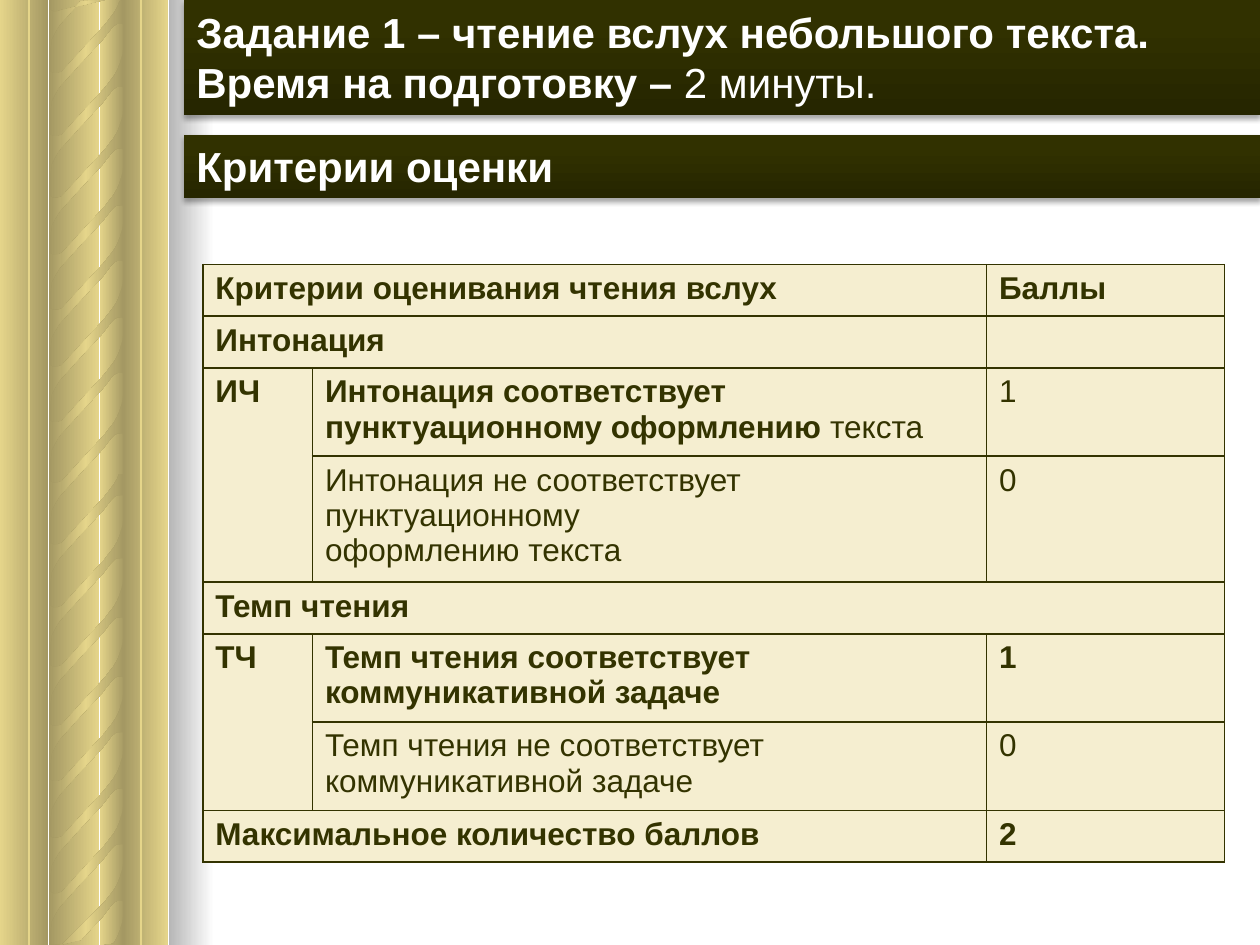
"""Builds the slide with the marking criteria for reading aloud."""
import pptx
import pptx.util
import pptx.dml.color
import pptx.enum.shapes
import pptx.enum.text
import pptx.oxml
import pptx.oxml.ns

Inches = pptx.util.Inches
RECTANGLE = pptx.enum.shapes.MSO_SHAPE.RECTANGLE

THEME = {
    "font": "Arial", "banner_size": 24, "table_size": 18,
    "banner_text": "FFFFFF", "table_text": "333300", "table_border": "333300",
    "cell": "F5EED0", "gold": "E5D58A",
    "light_to_dark": [(0, "E5D58A"), (100, "A49863")],
    "dark_to_light": [(0, "A49863"), (100, "E5D58A")],
    "strand": [(0, "A49863"), (50, "E5D58A"), (100, "A49863")],
    "column_shade": [(0, "B6B6B6"), (100, "FFFFFF")],
    "banner": [(0, "262600"), (80, "313100"), (100, "323200")],
}
SLIDE_WIDTH, SLIDE_HEIGHT = 10, 7.5
BANNER_LEFT = 1.46

BANNERS = [
    (0, 0.91, [[("Задание 1 – чтение вслух небольшого текста.", True)],
               [("Время на подготовку – ", True), ("2 минуты.", False)]]),
    (1.07, 0.5, [[("Критерии оценки", True)]]),
]

COLUMN_WIDTHS = [0.87, 5.35, 1.89]
ROW_HEIGHTS = [0.41, 0.41, 0.7, 1, 0.41, 0.7, 0.7, 0.41]
CRITERIA = {
    (0, 0): [[("Критерии оценивания чтения вслух", True)]],
    (0, 2): [[("Баллы", True)]],
    (1, 0): [[("Интонация", True)]],
    (2, 0): [[("ИЧ", True)]],
    (2, 1): [[("Интонация соответствует пунктуационному оформлению ", True), ("текста", False)]],
    (2, 2): [[("1", False)]],
    (3, 1): [[("Интонация не соответствует пунктуационному", False)],
             [("оформлению текста", False)]],
    (3, 2): [[("0", False)]],
    (4, 0): [[("Темп чтения", True)]],
    (5, 0): [[("ТЧ", True)]],
    (5, 1): [[("Темп чтения соответствует коммуникативной задаче", True)]],
    (5, 2): [[("1", True)]],
    (6, 1): [[("Темп чтения не соответствует коммуникативной задаче", False)]],
    (6, 2): [[("0", False)]],
    (7, 0): [[("Максимальное количество баллов", True)]],
    (7, 2): [[("2", True)]],
}
MERGES = [((0, 0), (0, 1)), ((1, 0), (1, 1)), ((2, 0), (3, 0)),
          ((4, 0), (4, 2)), ((5, 0), (6, 0)), ((7, 0), (7, 1))]

COLUMN_BANDS = [(0.79, 0.2, "light_to_dark"), (0, 0.38, "light_to_dark"),
                (0.39, 0.4, "dark_to_light"), (0.98, 0.35, "dark_to_light")]
COLUMN_HALVES = [
    (3.74, [4.58, 5.05, 5.49, 5.94, 6.38, 6.83, 4.11, 3.61]),
    (0, [0.86, 1.31, 1.75, 2.2, 2.64, 7.25, 0.37, -0.13, -0.62, 3.12]),
]
STRAND = [(0.98, 0.09), (0.98, 0.33), (0.97, 0.32), (0.93, 0.32), (0.91, 0.33),
          (0.88, 0.36), (0.81, 0.45), (0.64, 0.63), (0.47, 0.82), (0.44, 0.87),
          (0.41, 0.93), (0.4, 1.01), (0.39, 1.12), (0.39, 0.63), (0.39, 0.68),
          (0.4, 0.7), (0.42, 0.71), (0.44, 0.71), (0.46, 0.71), (0.49, 0.7),
          (0.83, 0.33), (0.9, 0.24), (0.93, 0.19), (0.95, 0.14), (0.97, 0.07),
          (0.98, 0), (0.98, 0.2)]
GROOVES = [0.23, 1.12]


def drawing_element(markup):
    return pptx.oxml.parse_xml(markup.replace(">", f" {pptx.oxml.ns.nsdecls('a')}>", 1))


def rgb(name):
    return pptx.dml.color.RGBColor.from_string(THEME[name])


def paint(shape, gradient, angle=0):
    shape.shadow.inherit = False
    shape.line.fill.background()
    shape.fill.background()
    stops = "".join(f'<a:gs pos="{position * 1000}"><a:srgbClr val="{color}"/></a:gs>'
                    for position, color in THEME[gradient])
    properties = shape._element.spPr
    properties.replace(
        properties.find(pptx.oxml.ns.qn("a:noFill")),
        drawing_element(f'<a:gradFill rotWithShape="1"><a:gsLst>{stops}</a:gsLst>'
                        f'<a:lin ang="{angle * 60000}" scaled="0"/></a:gradFill>'))


def add_band(slide, left, top, width, height, gradient, angle=0):
    band = slide.shapes.add_shape(RECTANGLE, Inches(left), Inches(top), Inches(width), Inches(height))
    paint(band, gradient, angle)
    return band


def write(frame, paragraphs, size, color):
    for index, runs in enumerate(paragraphs):
        paragraph = frame.add_paragraph() if index else frame.paragraphs[0]
        paragraph.alignment = pptx.enum.text.PP_ALIGN.LEFT
        for text, bold in runs:
            run = paragraph.add_run()
            run.text = text
            run.font.name = THEME["font"]
            run.font.size = pptx.util.Pt(THEME[size])
            run.font.bold = bold
            run.font.color.rgb = rgb(color)


def add_strand(slide, top, ceiling):
    points = [(Inches(x), Inches(min(max(top + y, ceiling), SLIDE_HEIGHT))) for x, y in STRAND]
    outline = slide.shapes.build_freeform(*points[0])
    outline.add_line_segments(points[1:])
    paint(outline.convert_to_shape(), "strand")


def add_column(slide):
    half_height = SLIDE_HEIGHT / 2
    for ceiling, strand_tops in COLUMN_HALVES:
        for left, width, gradient in COLUMN_BANDS:
            add_band(slide, left, ceiling, width, half_height + 0.01, gradient)
        for top in strand_tops:
            add_strand(slide, top, ceiling)
    add_band(slide, 1.34, 0, 0.36, SLIDE_HEIGHT, "column_shade")
    for x in GROOVES:
        groove = slide.shapes.add_connector(
            pptx.enum.shapes.MSO_CONNECTOR.STRAIGHT, Inches(x), 0, Inches(x), Inches(SLIDE_HEIGHT))
        groove.line.color.rgb = rgb("gold")
        groove.line.width = pptx.util.Pt(1)
        groove._element.spPr.append(drawing_element("<a:effectLst></a:effectLst>"))


def add_banner(slide, top, height, paragraphs):
    banner = add_band(slide, BANNER_LEFT, top, SLIDE_WIDTH - BANNER_LEFT, height, "banner", 270)
    effects = banner._element.spPr.find(pptx.oxml.ns.qn("a:effectLst"))
    effects.append(drawing_element(
        '<a:outerShdw blurRad="39370" dist="22860" dir="5400000" rotWithShape="0">'
        '<a:srgbClr val="000000"><a:alpha val="35000"/></a:srgbClr></a:outerShdw>'))
    frame = banner.text_frame
    frame.word_wrap = True
    frame.auto_size = pptx.enum.text.MSO_AUTO_SIZE.SHAPE_TO_FIT_TEXT
    frame.vertical_anchor = pptx.enum.text.MSO_ANCHOR.TOP
    write(frame, paragraphs, "banner_size", "banner_text")


def style_cell(cell):
    cell.fill.solid()
    cell.fill.fore_color.rgb = rgb("cell")
    for index, side in enumerate(["lnL", "lnR", "lnT", "lnB"]):
        cell._tc.get_or_add_tcPr().insert(index, drawing_element(
            f'<a:{side} w="12700"><a:solidFill><a:srgbClr val="{THEME["table_border"]}"/>'
            f'</a:solidFill></a:{side}>'))


def add_criteria(slide):
    table = slide.shapes.add_table(
        len(ROW_HEIGHTS), len(COLUMN_WIDTHS), Inches(1.61), Inches(2.1),
        Inches(sum(COLUMN_WIDTHS)), Inches(sum(ROW_HEIGHTS))).table
    table.first_row = table.horz_banding = False
    for column, width in zip(table.columns, COLUMN_WIDTHS):
        column.width = Inches(width)
    for row, height in zip(table.rows, ROW_HEIGHTS):
        row.height = Inches(height)
    for cell in table.iter_cells():
        style_cell(cell)
    for first, last in MERGES:
        table.cell(*first).merge(table.cell(*last))
    for place, paragraphs in CRITERIA.items():
        write(table.cell(*place).text_frame, paragraphs, "table_size", "table_text")


def main():
    deck = pptx.Presentation()
    deck.slide_width, deck.slide_height = Inches(SLIDE_WIDTH), Inches(SLIDE_HEIGHT)
    slide = deck.slides.add_slide(deck.slide_layouts[6])
    add_column(slide)
    for top, height, paragraphs in BANNERS:
        add_banner(slide, top, height, paragraphs)
    add_criteria(slide)
    deck.save("out.pptx")


if __name__ == "__main__":
    main()
